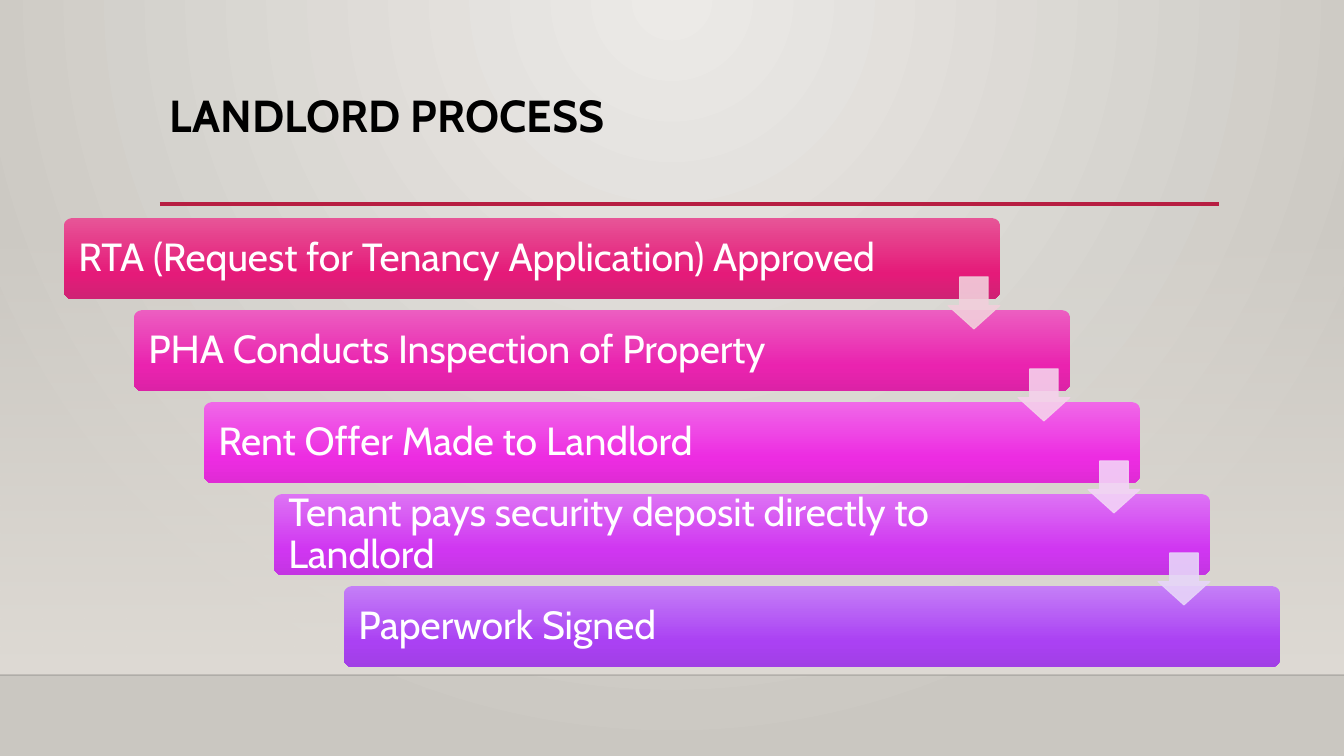
from lxml import etree
from pptx import Presentation
from pptx import util as u
from pptx.dml.color import RGBColor
from pptx.enum import shapes, text
from pptx.oxml import ns

PX = 914400 / 100.8
SLIDE_WIDTH, SLIDE_HEIGHT = 1344, 756
FONT = "Cabin"
COLORS = {
    "glow": "ECEAE7",
    "edge": "CAC7C1",
    "wall": "DFDBD5",
    "floor_line": "000001",
    "accent": "B71E42",
    "title": "000000",
    "step_text": "FFFFFF",
}
STEPS = [
    ("RTA (Request for Tenancy Application) Approved", ("E75597", "E51A79", "CF2374"), "F2CFDB", 104),
    ("PHA Conducts Inspection of Property", ("EC5EC1", "EA23AF", "DC22A6"), "F5D1EB", 136),
    ("Rent Offer Made to Landlord", ("F068E8", "ED2CE2", "E02BD5"), "F3D3F7", 136),
    ("Tenant pays security deposit directly to Landlord", ("DD73F4", "D036F1", "C435E3"), "E7D5F9", 136),
    ("Paperwork Signed", ("C57FF7", "AA41F3", "A13FE5"), None, 136),
]


def px(*lengths):
    return [u.Emu(round(length * PX)) for length in lengths]


def add_child(parent, tag, **attributes):
    child = etree.SubElement(parent, ns.qn(tag))
    for name, value in attributes.items():
        child.set(name, str(value))
    return child


def set_alpha(color, percent):
    add_child(color, "a:alpha", val=percent * 1000)


def set_gradient(fill, owner, stops, radial=False):
    fill.gradient()
    gradient = owner.xpath(".//a:gradFill")[0]
    for child in list(gradient):
        gradient.remove(child)
    stop_list = add_child(gradient, "a:gsLst")
    for position, color, alpha in stops:
        stop = add_child(stop_list, "a:gs", pos=position * 1000)
        set_alpha(add_child(stop, "a:srgbClr", val=color), alpha)
    if radial:
        circle = add_child(gradient, "a:path", path="circle")
        add_child(circle, "a:fillToRect", l=43000, t=0, r=43000, b=100000)
    else:
        add_child(gradient, "a:lin", ang=90 * 60000, scaled=0)


def add_shape(slide, kind, box):
    shape = slide.shapes.add_shape(kind, *px(*box))
    shape.shadow.inherit = False
    shape.line.fill.background()
    return shape


def add_rule(slide, left, right, top, color, points):
    rule = slide.shapes.add_connector(shapes.MSO_CONNECTOR.STRAIGHT, *px(left, top, right, top))
    rule.line.color.rgb = RGBColor.from_string(color)
    rule.line.width = u.Pt(points)
    add_child(rule._element.spPr, "a:effectLst")
    return rule


def write_text(frame, words, size, color, bold=False):
    frame.word_wrap = True
    paragraph = frame.paragraphs[0]
    paragraph.text = words
    paragraph.alignment = text.PP_ALIGN.LEFT
    paragraph.line_spacing = 0.9
    paragraph.font.name = FONT
    paragraph.font.size = u.Pt(size)
    paragraph.font.bold = bold
    paragraph.font.color.rgb = RGBColor.from_string(color)


def draw_backdrop(slide, wall_top, floor_top):
    set_gradient(slide.background.fill, slide._element,
                 [(0, COLORS["glow"], 100), (100, COLORS["edge"], 100)], radial=True)
    wall = add_shape(slide, shapes.MSO_SHAPE.RECTANGLE, (0, wall_top, SLIDE_WIDTH, floor_top - wall_top))
    set_gradient(wall.fill, wall._element, [(0, COLORS["wall"], 0), (100, COLORS["wall"], 100)])
    floor = add_rule(slide, 0, SLIDE_WIDTH, floor_top, COLORS["floor_line"], 1)
    set_alpha(floor._element.xpath(".//a:srgbClr")[0], 20)


def draw_title(slide, left, top, width, height):
    add_rule(slide, left, left + width, top + height - 1, COLORS["accent"], 2.5)
    title = slide.shapes.add_textbox(*px(left, top, width, height))
    write_text(title.text_frame, "LANDLORD PROCESS", 32, COLORS["title"], bold=True)


def draw_bar(slide, box, words, gradient, right_inset):
    bar = add_shape(slide, shapes.MSO_SHAPE.ROUNDED_RECTANGLE, box)
    bar.adjustments[0] = 0.1
    set_gradient(bar.fill, bar._element,
                 [(position, color, 100) for position, color in zip((0, 69, 100), gradient)])
    frame = bar.text_frame
    frame.vertical_anchor = text.MSO_ANCHOR.MIDDLE
    frame.margin_left, frame.margin_right = px(12, right_inset)
    frame.margin_top, frame.margin_bottom = px(12, 12)
    write_text(frame, words, 28, COLORS["step_text"])


def draw_arrow(slide, box, color):
    arrow = add_shape(slide, shapes.MSO_SHAPE.DOWN_ARROW, box)
    arrow.adjustments[0] = 0.45
    arrow.adjustments[1] = 0.55
    arrow.adjustments[0], arrow.adjustments[1] = 0.55, 0.45
    arrow.fill.solid()
    arrow.fill.fore_color.rgb = RGBColor.from_string(color)
    arrow.line.color.rgb = RGBColor.from_string(color)
    arrow.line.width = u.Pt(0.75)
    for fill_color in arrow._element.spPr.xpath(".//a:srgbClr"):
        set_alpha(fill_color, 90)


def draw_staircase(slide, left, top, width, height):
    bar_width, bar_height, arrow_size = 936, 81, 52
    gaps = len(STEPS) - 1
    step_x = (width - bar_width) // gaps
    step_y = (height - bar_height) // gaps
    corners = [(left + index * step_x, top + index * step_y) for index in range(len(STEPS))]
    for (x, y), (words, gradient, _, right_inset) in zip(corners, STEPS):
        draw_bar(slide, (x, y, bar_width, bar_height), words, gradient, right_inset)
    for (x, y), (_, _, color, _) in zip(corners[:-1], STEPS):
        draw_arrow(slide, (x + bar_width - arrow_size, y + 59, arrow_size, arrow_size), color)


def main():
    presentation = Presentation()
    presentation.slide_width, presentation.slide_height = px(SLIDE_WIDTH, SLIDE_HEIGHT)
    slide = presentation.slides.add_slide(presentation.slide_layouts[6])
    draw_backdrop(slide, 223, 675)
    draw_title(slide, 160, 89, 1059, 116)
    draw_staircase(slide, 64, 218, 1216, 449)
    presentation.save("out.pptx")


if __name__ == "__main__":
    main()
